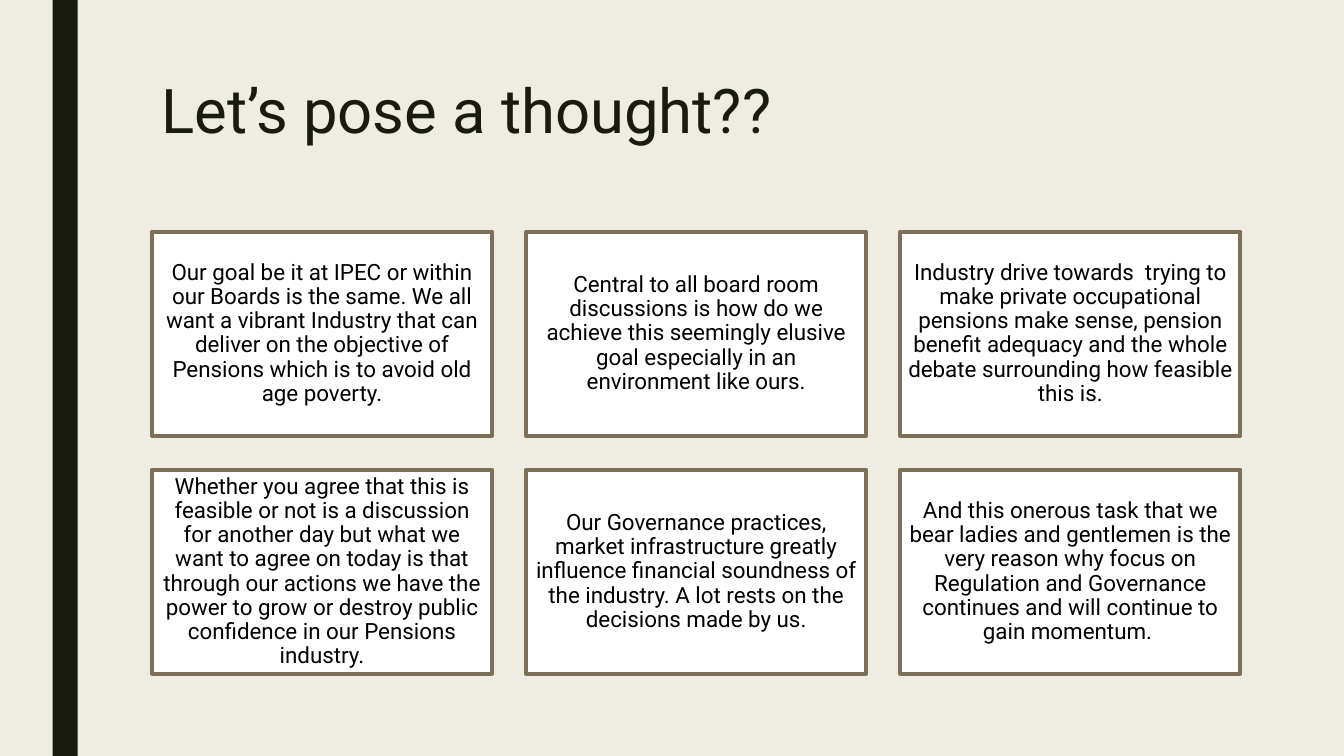
"""Build the slide that poses a thought in six framed statements."""
from dataclasses import dataclass

from pptx import Presentation
from pptx.dml.color import RGBColor as Rgb
from pptx.enum.shapes import MSO_SHAPE as Shape
from pptx.enum.text import MSO_ANCHOR as Anchor, MSO_AUTO_SIZE as AutoSize, PP_ALIGN as Align
from pptx.util import Pt

TITLE = "Let’s pose a thought??"
STATEMENTS = [
    "Our goal be it at IPEC or within our Boards is the same. We all want a vibrant "
    "Industry that can deliver on the objective of Pensions which is to avoid old age poverty.",
    "Central to all board room discussions is how do we achieve this seemingly elusive "
    "goal especially in an environment like ours.",
    "Industry drive towards  trying to make private occupational pensions make sense, "
    "pension benefit adequacy and the whole debate surrounding how feasible this is.",
    "Whether you agree that this is feasible or not is a discussion for another day but "
    "what we want to agree on today is that through our actions we have the power to grow "
    "or destroy public confidence in our Pensions industry.",
    "Our Governance practices, market infrastructure greatly influence financial soundness "
    "of the industry. A lot rests on the decisions made by us.",
    "And this onerous task that we bear ladies and gentlemen is the very reason why focus on "
    "Regulation and Governance continues and will continue to gain momentum. ",
]
COLUMNS = 3
GRID_LEFT, GRID_TOP = 108.5, 165.5
BOX_WIDTH, BOX_HEIGHT = 243, 145.75
GAP = 24.25


@dataclass(frozen=True)
class Theme:
    font: str = "Roboto"
    background: Rgb = Rgb(0xEF, 0xED, 0xE3)
    dark: Rgb = Rgb(0x19, 0x1B, 0x0E)
    frame: Rgb = Rgb(0x7C, 0x70, 0x58)
    panel: Rgb = Rgb(0xFF, 0xFF, 0xFF)
    text: Rgb = Rgb(0, 0, 0)
    title_size: float = 44
    body_size: float = 16
    frame_width: float = 2.75


def apply(target, values):
    for name, value in values.items():
        setattr(target, name, value)


class SlideBuilder:
    def __init__(self, slide, theme):
        self.slide = slide
        self.theme = theme
        slide.background.fill.solid()
        slide.background.fill.fore_color.rgb = theme.background

    def set_text(self, shape, text, size, color, inset, anchor, align, spacing):
        frame = shape.text_frame
        sides = ("margin_left", "margin_top", "margin_right", "margin_bottom")
        apply(frame, {"word_wrap": True, "auto_size": AutoSize.NONE, "vertical_anchor": anchor})
        apply(frame, dict(zip(sides, map(Pt, inset))))
        para = frame.paragraphs[0]
        apply(para, {"alignment": align, "line_spacing": spacing})
        span = para.add_run()
        span.text = text
        apply(span.font, {"name": self.theme.font, "size": Pt(size)})
        span.font.color.rgb = color

    def title(self, text, left, top, width, height):
        box = self.slide.shapes.title
        apply(box, {"left": Pt(left), "top": Pt(top), "width": Pt(width), "height": Pt(height)})
        self.set_text(box, text, self.theme.title_size, self.theme.dark,
                      (7.2, 3.6, 7.2, 3.6), Anchor.TOP, Align.LEFT, 0.89)

    def rectangle(self, left, top, width, height, fill):
        box = self.slide.shapes.add_shape(
            Shape.RECTANGLE, Pt(left), Pt(top), Pt(width), Pt(height))
        box.shadow.inherit = False
        box.fill.solid()
        box.fill.fore_color.rgb = fill
        box.line.fill.background()
        return box

    def statement(self, text, left, top, width, height):
        box = self.rectangle(left, top, width, height, self.theme.panel)
        box.line.color.rgb = self.theme.frame
        box.line.width = Pt(self.theme.frame_width)
        self.set_text(box, text, self.theme.body_size, self.theme.text,
                      (4.8,) * 4, Anchor.MIDDLE, Align.CENTER, 0.9)


def main():
    deck = Presentation()
    apply(deck, {"slide_width": Pt(960), "slide_height": Pt(540)})
    page = SlideBuilder(deck.slides.add_slide(deck.slide_layouts[5]), Theme())
    page.rectangle(37.5, 0, 18, 540, page.theme.dark)
    page.title(TITLE, 108, 54, 756, 75.6)
    for index, text in enumerate(STATEMENTS):
        row, column = divmod(index, COLUMNS)
        page.statement(text, GRID_LEFT + column * (BOX_WIDTH + GAP),
                       GRID_TOP + row * (BOX_HEIGHT + GAP), BOX_WIDTH, BOX_HEIGHT)
    deck.save("out.pptx")


if __name__ == "__main__":
    main()
